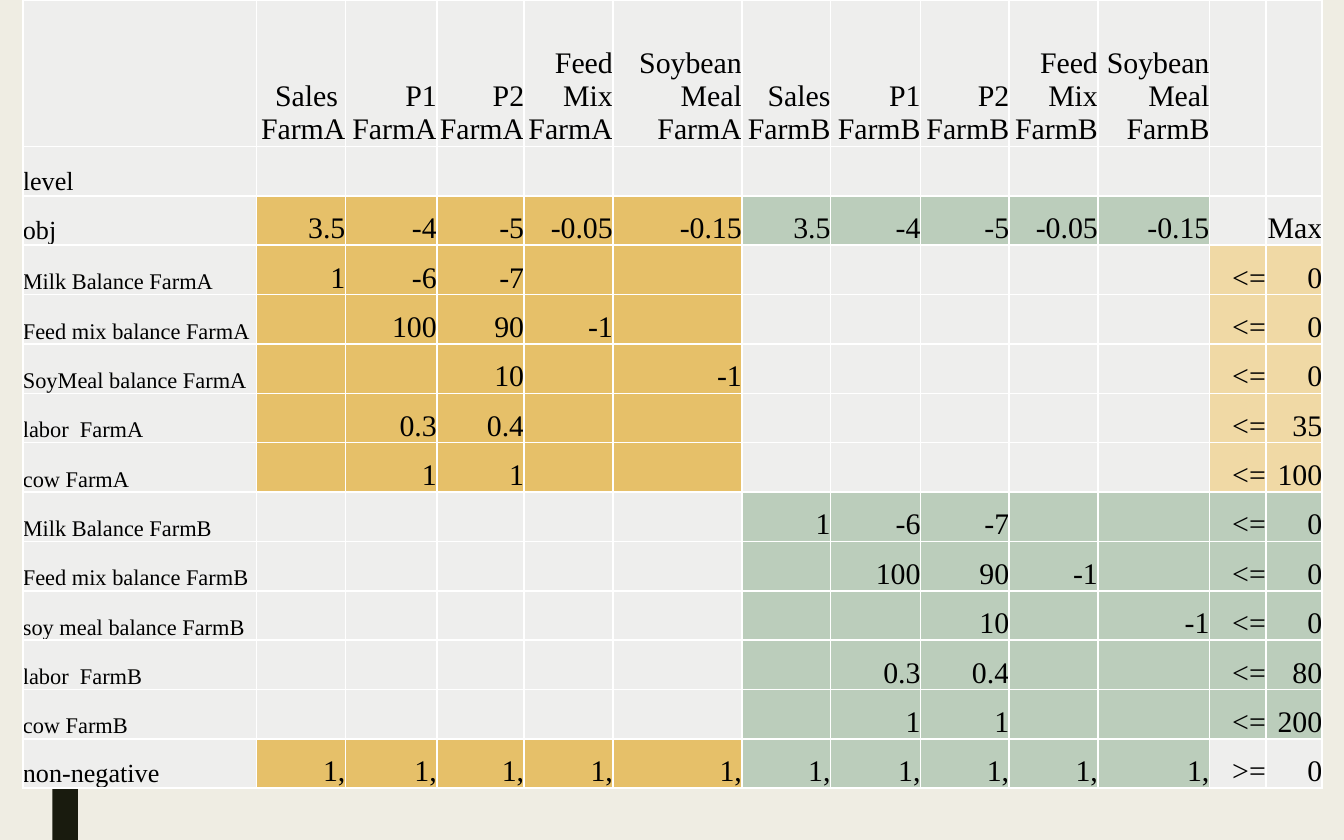
"""Build a slide with the linear programming tableau of two dairy farms."""
from lxml.etree import SubElement
from pptx import Presentation
from pptx.dml.color import RGBColor
from pptx.enum.shapes import MSO_SHAPE
from pptx.enum.text import MSO_ANCHOR, PP_ALIGN
from pptx.oxml.ns import qn
from pptx.util import Inches, Pt

COLORS = {
    "background": "EFEDE3", "bar": "191B0E", "text": "000000", "border": "FFFFFF",
    "plain": "EEEEED", "A": "E6C069", "A limit": "F0D9A5", "B": "BBCDBB", "B limit": "BBCDBB",
}
FONT = "Times New Roman"
LABEL_SIZE, CONSTRAINT_SIZE, VALUE_SIZE = 14, 12, 16

EMPTY = [""] * 5
PRICES = ["3.5", "-4", "-5", "-0.05", "-0.15"]
ONES = ["1,"] * 5
ACTIVITIES_A = ["Sales  FarmA", "P1 FarmA", "P2 FarmA", "Feed\nMix FarmA", "Soybean Meal FarmA"]
ACTIVITIES_B = ["Sales FarmB", "P1 FarmB", "P2 FarmB", "Feed\nMix FarmB", "Soybean Meal FarmB"]
COEFFICIENTS = [
    ["1", "-6", "-7", "", ""],
    ["", "100", "90", "-1", ""],
    ["", "", "10", "", "-1"],
    ["", "0.3", "0.4", "", ""],
    ["", "1", "1", "", ""],
]
CONSTRAINTS = {
    "A": [("Milk Balance FarmA", "0"), ("Feed mix balance FarmA", "0"),
          ("SoyMeal balance FarmA", "0"), ("labor  FarmA", "35"), ("cow FarmA", "100")],
    "B": [("Milk Balance FarmB", "0"), ("Feed mix balance FarmB", "0"),
          ("soy meal balance FarmB", "0"), ("labor  FarmB", "80"), ("cow FarmB", "200")],
}
COLUMN_WIDTHS = [1.74, 0.66, 0.68, 0.65, 0.66, 0.96, 0.66, 0.67, 0.66, 0.66, 0.83, 0.42, 0.42]
TABLE_LEFT, TABLE_HEIGHT, HEADER_HEIGHT = 0.17, 5.87, 1.09


def rgb(name):
    return RGBColor.from_string(COLORS[name])


def row_fills(farm_a="plain", farm_b="plain", limit="plain"):
    return ["plain"] + [farm_a] * 5 + [farm_b] * 5 + [limit] * 2


def tableau_rows():
    rows = [
        (["", *ACTIVITIES_A, *ACTIVITIES_B, "", ""], row_fills(), LABEL_SIZE),
        (["level", *EMPTY, *EMPTY, "", ""], row_fills(), LABEL_SIZE),
        (["obj", *PRICES, *PRICES, "", "Max"], row_fills("A", "B"), LABEL_SIZE),
    ]
    for farm, constraints in CONSTRAINTS.items():
        for (label, limit), values in zip(constraints, COEFFICIENTS):
            if farm == "A":
                blocks, fills = values + EMPTY, row_fills(farm_a="A", limit="A limit")
            else:
                blocks, fills = EMPTY + values, row_fills(farm_b="B", limit="B limit")
            rows.append(([label, *blocks, "<=", limit], fills, CONSTRAINT_SIZE))
    rows.append((["non-negative", *ONES, *ONES, ">=", "0"], row_fills("A", "B"), LABEL_SIZE))
    return rows


def add_borders(cell):
    properties = cell._tc.get_or_add_tcPr()
    for side in ("lnL", "lnR", "lnT", "lnB"):
        line = SubElement(properties, qn(f"a:{side}"), w=str(Pt(1)))
        SubElement(SubElement(line, qn("a:solidFill")), qn("a:srgbClr"), val=COLORS["border"])


def format_cell(cell, text, fill, size, alignment):
    add_borders(cell)
    cell.fill.solid()
    cell.fill.fore_color.rgb = rgb(fill)
    cell.margin_left = cell.margin_right = cell.margin_top = cell.margin_bottom = 0
    cell.vertical_anchor = MSO_ANCHOR.BOTTOM
    if not text:
        return
    for index, words in enumerate(text.split("\n")):
        frame = cell.text_frame
        paragraph = frame.add_paragraph() if index else frame.paragraphs[0]
        paragraph.alignment = alignment
        run = paragraph.add_run()
        run.text = words
        run.font.name = FONT
        run.font.size = Pt(size)
        run.font.color.rgb = rgb("text")


def add_bar(slide, height):
    bar = slide.shapes.add_shape(MSO_SHAPE.RECTANGLE, Inches(0.39), 0, Inches(0.19), height)
    bar.shadow.inherit = False
    bar.fill.solid()
    bar.fill.fore_color.rgb = rgb("bar")
    bar.line.fill.background()


def add_tableau(slide):
    rows = tableau_rows()
    tableau = slide.shapes.add_table(
        len(rows), len(COLUMN_WIDTHS), Inches(TABLE_LEFT), 0,
        Inches(sum(COLUMN_WIDTHS)), Inches(TABLE_HEIGHT)).table
    tableau.first_row = tableau.horz_banding = False
    for column, width in zip(tableau.columns, COLUMN_WIDTHS):
        column.width = Inches(width)
    row_height = (TABLE_HEIGHT - HEADER_HEIGHT) / (len(rows) - 1)
    for r, (texts, fills, label_size) in enumerate(rows):
        tableau.rows[r].height = Inches(row_height if r else HEADER_HEIGHT)
        for c, (text, fill) in enumerate(zip(texts, fills)):
            size = VALUE_SIZE if c else label_size
            alignment = PP_ALIGN.RIGHT if c else PP_ALIGN.LEFT
            format_cell(tableau.cell(r, c), text, fill, size, alignment)


def main():
    deck = Presentation()
    deck.slide_width, deck.slide_height = Inches(10), Inches(6.25)
    slide = deck.slides.add_slide(deck.slide_layouts[6])
    slide.background.fill.solid()
    slide.background.fill.fore_color.rgb = rgb("background")
    add_bar(slide, deck.slide_height)
    add_tableau(slide)
    deck.save("out.pptx")


if __name__ == "__main__":
    main()
